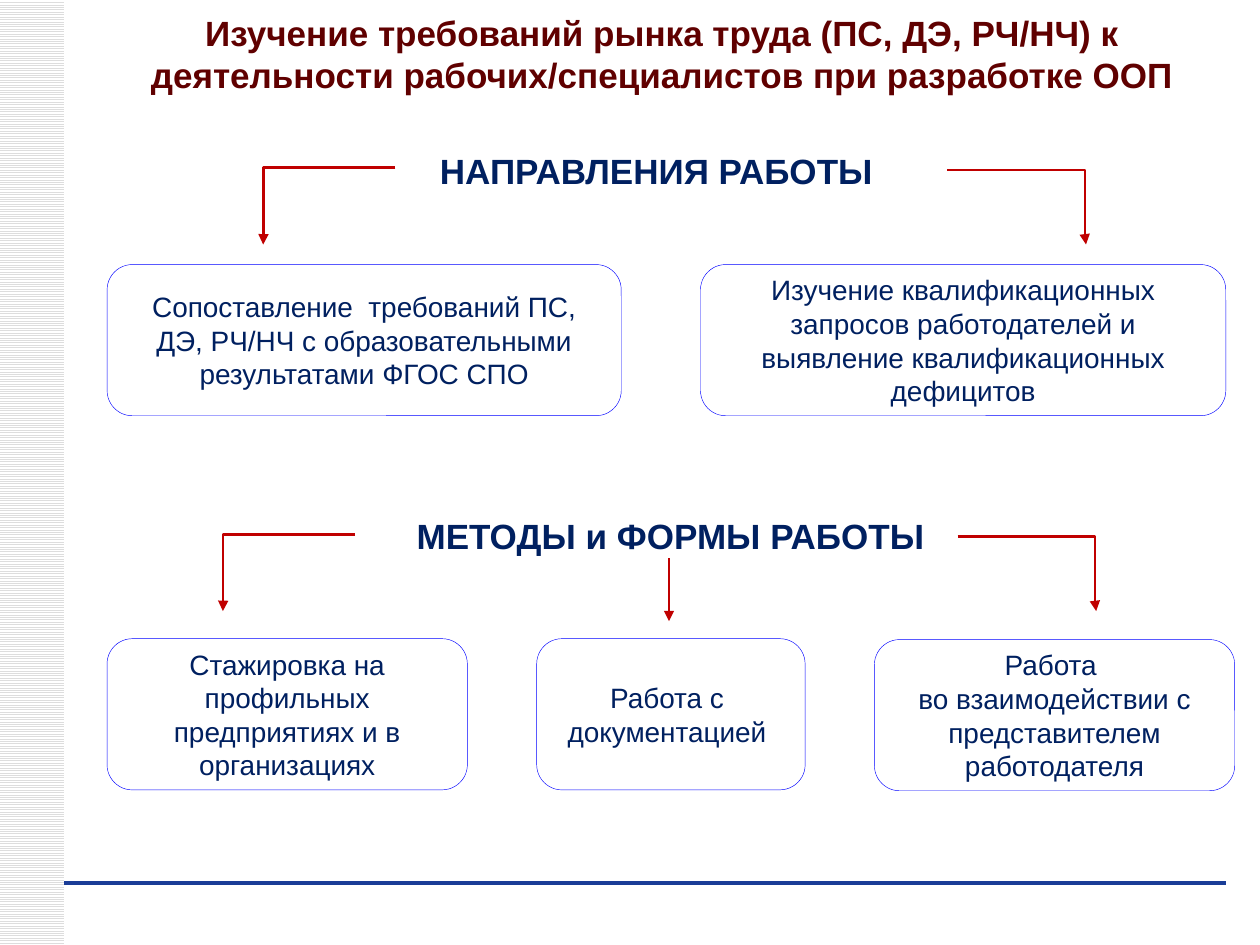
from dataclasses import dataclass

from lxml import etree
from pptx import Presentation
from pptx.dml.color import RGBColor
from pptx.enum import dml, shapes, text
from pptx.oxml.ns import qn
from pptx.util import Pt


@dataclass(frozen=True)
class Theme:
    font: str = "Arial"
    title: RGBColor = RGBColor(0x60, 0x00, 0x00)
    ink: RGBColor = RGBColor(0x00, 0x20, 0x60)
    arrow: RGBColor = RGBColor(0xC0, 0x00, 0x00)
    border: RGBColor = RGBColor(0x00, 0x00, 0xFF)
    rule: RGBColor = RGBColor(0x1A, 0x3D, 0x97)
    stripe: RGBColor = RGBColor(0xDD, 0xDD, 0xDD)
    paper: RGBColor = RGBColor(0xFF, 0xFF, 0xFF)
    heading_size: int = 20
    body_size: int = 16


theme = Theme()


def write(sp, content, size, color, bold=False, anchor=text.MSO_ANCHOR.MIDDLE):
    """Set centred, wrapped text in one style."""
    tf = sp.text_frame
    tf.text = content
    tf.word_wrap = True
    tf.auto_size = text.MSO_AUTO_SIZE.NONE
    tf.vertical_anchor = anchor
    for p in tf.paragraphs:
        p.alignment = text.PP_ALIGN.CENTER
        p.line_spacing = 1.0
        p.space_before = Pt(0)
        for r in p.runs:
            r.font.name = theme.font
            r.font.size = Pt(size)
            r.font.bold = bold
            r.font.color.rgb = color


def connect(kind, ends, color, width, arrow=True, bend=None):
    """Draw a shadowless connector, with an optional arrowhead and bend."""
    c = s.shapes.add_connector(kind, *(Pt(v) for v in ends))
    c.line.color.rgb = color
    c.line.width = Pt(width)
    pr = c._element.spPr
    if arrow:
        etree.SubElement(pr.find(qn("a:ln")), qn("a:tailEnd"), type="triangle")
    if bend is not None:
        geom = pr.find(qn("a:prstGeom"))
        av = geom.find(qn("a:avLst"))
        if av is None:
            av = etree.SubElement(geom, qn("a:avLst"))
        etree.SubElement(av, qn("a:gd"), name="adj1", fmla=f"val {bend}")
    etree.SubElement(pr, qn("a:effectLst"))


prs = Presentation()
prs.slide_width, prs.slide_height = Pt(720), Pt(540)
s = prs.slides.add_slide(prs.slide_layouts[5])

# Striped side band and footer rule
sp = s.shapes.add_shape(shapes.MSO_SHAPE.RECTANGLE, 0, 0, Pt(36.72), Pt(540))
sp.shadow.inherit = False
sp.fill.patterned()
sp.fill.pattern = dml.MSO_PATTERN.LIGHT_HORIZONTAL
sp.fill.fore_color.rgb = theme.stripe
sp.fill.back_color.rgb = theme.paper
sp.line.fill.background()
connect(shapes.MSO_CONNECTOR.STRAIGHT, (36.72, 504.72, 700.56, 504.72),
        theme.rule, 0, arrow=False)

# Title
sp = s.shapes.title
sp.left, sp.top, sp.width, sp.height = Pt(39.6), Pt(6.5), Pt(677.5), Pt(48.2)
write(sp, "Изучение требований рынка труда (ПС, ДЭ, РЧ/НЧ) к деятельности "
          "рабочих/специалистов при разработке ООП",
      theme.heading_size, theme.title, bold=True)

# Section headings
for x, y, w, label in [(226, 82, 298, "НАПРАВЛЕНИЯ РАБОТЫ"),
                       (201.6, 290.2, 363, "МЕТОДЫ и ФОРМЫ РАБОТЫ")]:
    sp = s.shapes.add_textbox(Pt(x), Pt(y), Pt(w), Pt(31.5))
    write(sp, label, theme.heading_size, theme.ink, bold=True,
          anchor=text.MSO_ANCHOR.TOP)

# Elbow arrows on both sides of each heading: left start, right start, top
for left, right, y in [(226, 541.4, 95.8), (203, 547.2, 305.3)]:
    tip = y + 43.9
    for ends, bend in [((left, y, left - 75.6, tip), 99800),
                       ((right, y + 1.4, right + 79.2, tip), 99200)]:
        connect(shapes.MSO_CONNECTOR.ELBOW, ends, theme.arrow, 1.5, bend=bend)

# Middle arrow
connect(shapes.MSO_CONNECTOR.STRAIGHT, (382.3, 319, 382.3, 355),
        theme.arrow, 1.5)

# Rounded boxes: left, top, width, text
boxes = [
    (61.2, 151.2, 293.8, "Сопоставление  требований ПС, ДЭ, РЧ/НЧ с "
                         "образовательными результатами ФГОС СПО"),
    (400.3, 151.2, 300.2, "Изучение квалификационных запросов работодателей и "
                          "выявление квалификационных дефицитов"),
    (61.2, 365, 205.9, "Стажировка на профильных\n"
                       "предприятиях и в организациях"),
    (306.7, 365, 153.4, "Работа с \nдокументацией "),
    (499.7, 365.5, 205.9, "Работа \nво взаимодействии c представителем "
                          "работодателя"),
]
for x, y, w, label in boxes:
    sp = s.shapes.add_shape(shapes.MSO_SHAPE.ROUNDED_RECTANGLE,
                            Pt(x), Pt(y), Pt(w), Pt(86.4))
    sp.shadow.inherit = False
    sp.fill.background()
    sp.line.color.rgb = theme.border
    sp.line.width = Pt(0.25)
    write(sp, label, theme.body_size, theme.ink)

prs.save("out.pptx")
